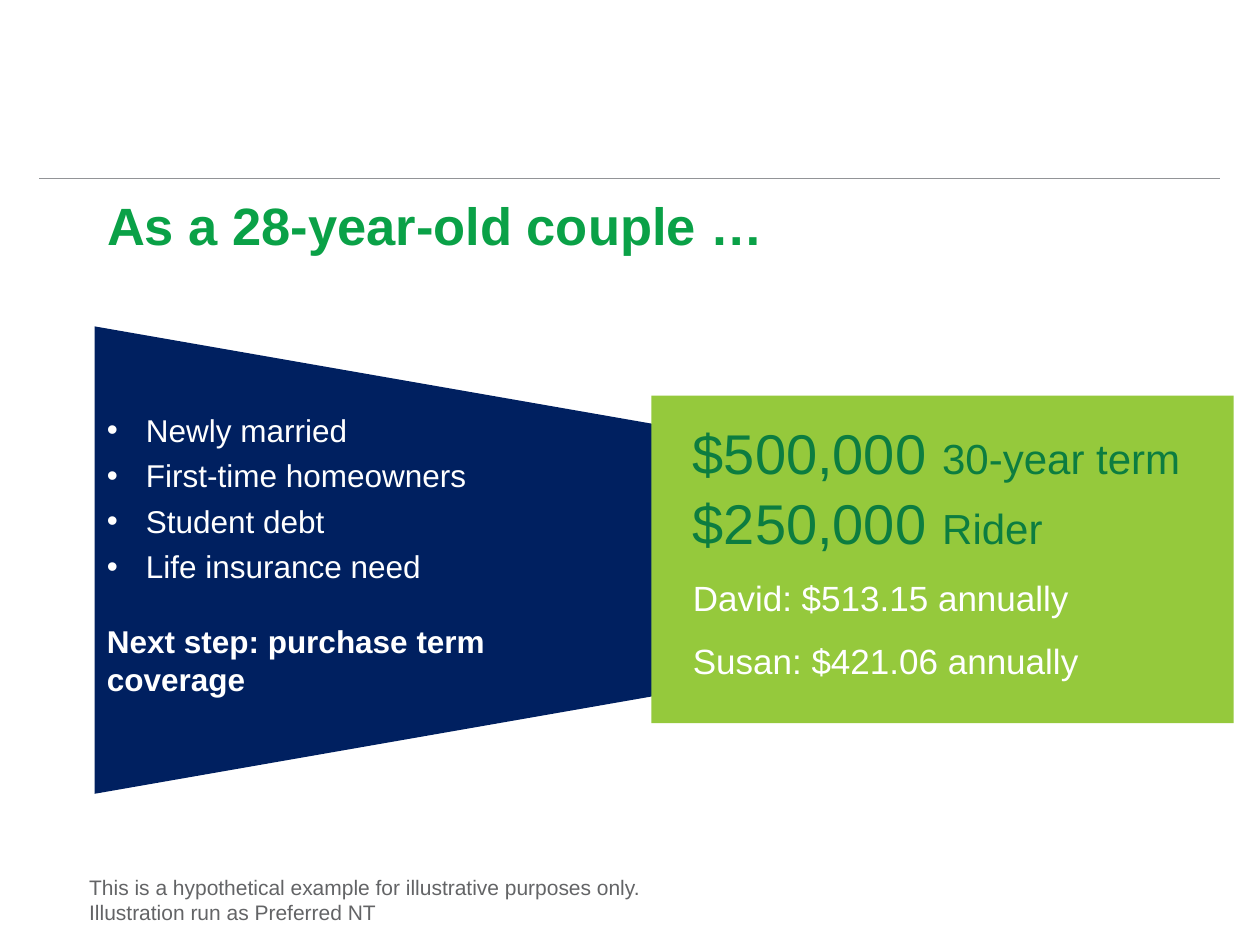
import pptx
import pptx.dml.color
import pptx.enum.shapes
import pptx.enum.text
import pptx.oxml
import pptx.oxml.ns
import pptx.util
from pptx.util import Inches

FONT = "Arial"
NAVY, LIME, GREEN, DARK_GREEN = "002060", "95C93C", "0AA147", "0C7D40"
WHITE, GRAY, RULE_GRAY = "FFFFFF", "636466", "929497"


def color(hex_value):
    return pptx.dml.color.RGBColor.from_string(hex_value)


def add_bullet(paragraph, indent):
    properties = paragraph._p.get_or_add_pPr()
    properties.set("marL", str(indent))
    properties.set("indent", str(-indent))
    namespace = pptx.oxml.ns.nsdecls("a")
    properties.append(pptx.oxml.parse_xml(f'<a:buFont {namespace} typeface="Arial"/>'))
    properties.append(pptx.oxml.parse_xml(f'<a:buChar {namespace} char="•"/>'))


def write_run(paragraph, text, size=18, fill=WHITE, bold=False):
    run = paragraph.add_run()
    run.text = text
    run.font.name = FONT
    run.font.size = pptx.util.Pt(size)
    run.font.bold = bold
    run.font.color.rgb = color(fill)


def write_paragraph(frame, text, spacing=None, before=0, bullet=False, **style):
    """Fill the first paragraph if it is empty, otherwise add one."""
    paragraph = frame.paragraphs[0]
    if paragraph.runs:
        paragraph = frame.add_paragraph()
    if bullet:
        add_bullet(paragraph, Inches(0.31))
    paragraph.alignment = pptx.enum.text.PP_ALIGN.LEFT
    paragraph.space_before = pptx.util.Pt(before)
    if spacing:
        paragraph.line_spacing = spacing
    write_run(paragraph, text, **style)
    return paragraph


def add_text_box(slide, left, top, width, height):
    shape = slide.shapes.add_textbox(Inches(left), Inches(top), Inches(width), Inches(height))
    shape.text_frame.word_wrap = True
    return shape.text_frame


def add_panel(slide, kind, left, top, width, height, fill):
    shape = slide.shapes.add_shape(kind, Inches(left), Inches(top), Inches(width), Inches(height))
    shape.shadow.inherit = False
    shape.fill.solid()
    shape.fill.fore_color.rgb = color(fill)
    shape.line.fill.background()
    return shape


def add_rule(slide, left, right, top):
    line = slide.shapes.add_connector(
        pptx.enum.shapes.MSO_CONNECTOR.STRAIGHT,
        Inches(left), Inches(top), Inches(right), Inches(top))
    line.line.color.rgb = color(RULE_GRAY)
    line.line.width = pptx.util.Pt(0.5)
    line._element.spPr.append(
        pptx.oxml.parse_xml(f'<a:effectLst {pptx.oxml.ns.nsdecls("a")}/>'))


def set_title(slide, text):
    title = slide.shapes.title
    title.left, title.top = Inches(0.75), Inches(1.54)
    title.width, title.height = Inches(8.92), Inches(1.05)
    frame = title.text_frame
    frame.vertical_anchor = pptx.enum.text.MSO_ANCHOR.TOP
    frame.auto_size = pptx.enum.text.MSO_AUTO_SIZE.NONE
    write_paragraph(frame, text, spacing=0.9, size=30, fill=GREEN, bold=True)


def add_situation(slide):
    trapezoid = add_panel(slide, pptx.enum.shapes.MSO_SHAPE.TRAPEZOID,
                          1.55, 1.79, 3.71, 5.31, NAVY)
    trapezoid.rotation = 90
    frame = add_text_box(slide, 0.75, 3.15, 3.41, 2.47)
    for text in ("Newly married", "First-time homeowners",
                 "Student debt", "Life insurance need"):
        write_paragraph(frame, text, spacing=pptx.util.Pt(26), bullet=True)
    write_paragraph(frame, "Next step: purchase term coverage", before=21, bold=True)


def add_coverage(slide):
    add_panel(slide, pptx.enum.shapes.MSO_SHAPE.RECTANGLE, 5.17, 3.14, 4.62, 2.6, LIME)
    frame = add_text_box(slide, 5.4, 3.39, 4.16, 2.1)
    policies = (("$500,000 ", "30-year term"), ("$250,000 ", "Rider"))
    for index, (amount, policy) in enumerate(policies):
        paragraph = write_paragraph(frame, amount, spacing=pptx.util.Pt(30),
                                    before=10 if index else 0, size=32, fill=DARK_GREEN)
        write_run(paragraph, policy, size=24, fill=DARK_GREEN)
    for premium in ("David: $513.15 annually", "Susan: $421.06 annually"):
        write_paragraph(frame, premium, spacing=pptx.util.Pt(26), before=10, size=20)


def add_footnote(slide):
    frame = add_text_box(slide, 0.61, 6.89, 8.83, 0.75)
    for text in ("This is a hypothetical example for illustrative purposes only.",
                 "Illustration run as Preferred NT"):
        write_paragraph(frame, text, size=12, fill=GRAY)


def main():
    presentation = pptx.Presentation()
    presentation.slide_width, presentation.slide_height = Inches(10), Inches(7.5)
    slide = presentation.slides.add_slide(presentation.slide_layouts[5])

    # Heading
    add_rule(slide, 0.31, 9.68, 1.42)
    set_title(slide, "As a 28-year-old couple …")

    # Footnote and the two panels
    add_footnote(slide)
    add_situation(slide)
    add_coverage(slide)

    presentation.save("out.pptx")


if __name__ == "__main__":
    main()
